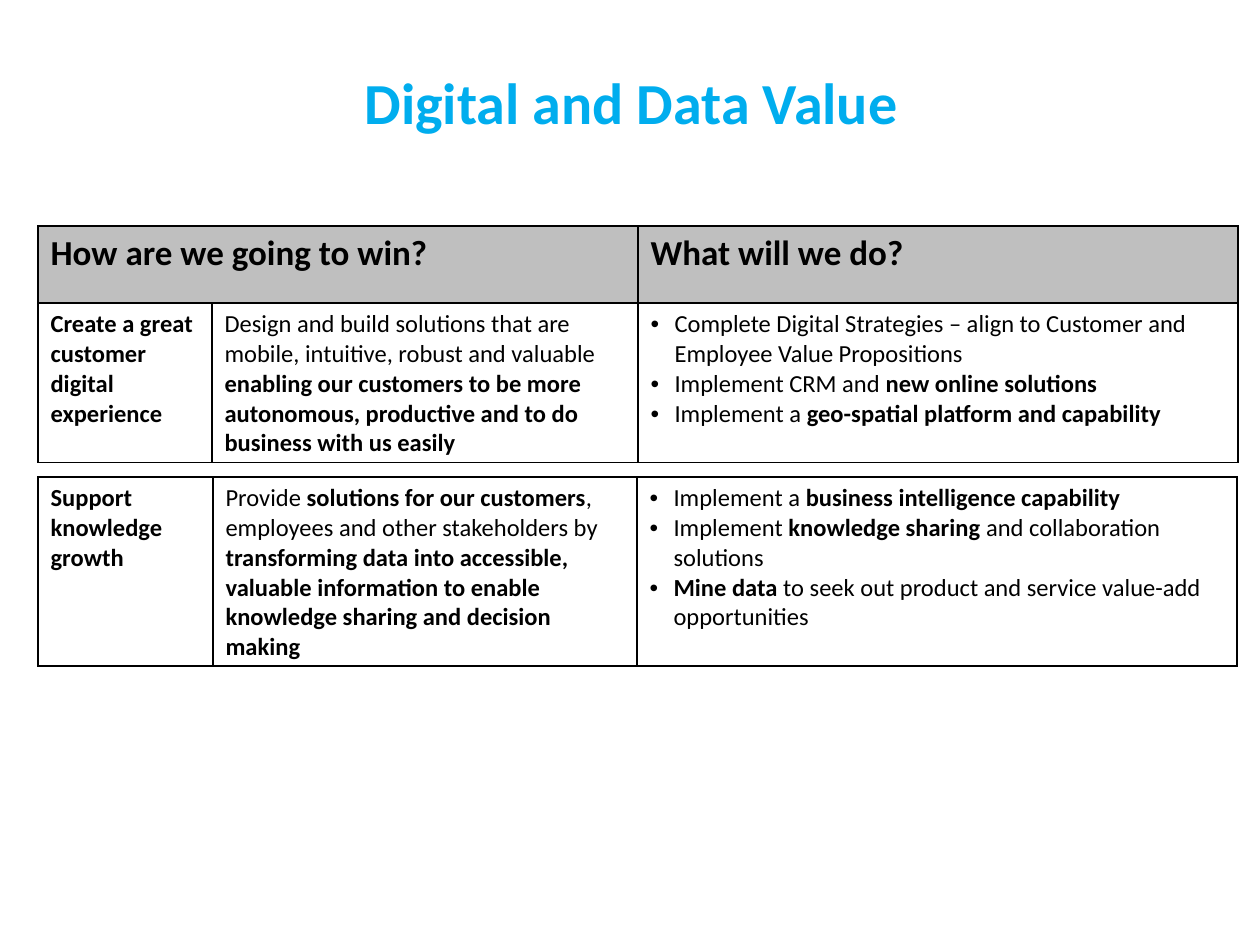
from pptx import Presentation
from pptx import util as u
from pptx.dml.color import RGBColor
from pptx.enum import text
from pptx.oxml.ns import qn
from lxml import etree

PX = 914400 / 126
FONT = "Calibri"
COLORS = {"title": "00ADEE", "ink": "000000", "header": "BFBFBF"}
BULLET_INDENT = 24

HEADER = [["How are we going to win?"], None, ["What will we do?"]]
EXPERIENCE = [
    ["**Create a great customer digital experience**"],
    ["Design and build solutions that are mobile, intuitive, robust and valuable "
     "**enabling our customers to be more autonomous, productive and to do business with us easily**"],
    ["Complete Digital Strategies – align to Customer and Employee Value Propositions",
     "Implement CRM and **new online solutions**",
     "Implement a **geo-spatial platform and capability**"],
]
KNOWLEDGE = [
    ["**Support knowledge growth**"],
    ["Provide **solutions for our customers**, employees and other stakeholders by "
     "**transforming data into accessible, valuable information to enable knowledge sharing "
     "and decision making**"],
    ["Implement a **business intelligence capability**",
     "Implement **knowledge sharing** and collaboration solutions",
     "**Mine data **to seek out product and service value-add opportunities"],
]


def px(length):
    """Turn pixels into EMU."""
    return u.Emu(round(length * PX))


def style_font(font, size, color, bold):
    """Set the face, size, colour and weight of a font."""
    font.name, font.size, font.bold = FONT, u.Pt(size), bold
    font.color.rgb = RGBColor.from_string(COLORS[color])


def add_title(slide, title, left, top, width, height):
    """Add the centred slide title."""
    shape = slide.shapes.add_textbox(px(left), px(top), px(width), px(height))
    frame = shape.text_frame
    frame.word_wrap = True
    frame.margin_left = frame.margin_right = frame.margin_top = frame.margin_bottom = 0
    frame.vertical_anchor = text.MSO_ANCHOR.MIDDLE
    frame.text = title
    paragraph = frame.paragraphs[0]
    paragraph.alignment = text.PP_ALIGN.CENTER
    style_font(paragraph.runs[0].font, 33.2, "title", True)


def add_bullet(paragraph):
    """Give a paragraph a round bullet with a hanging indent."""
    properties = paragraph._p.get_or_add_pPr()
    properties.set("marL", str(px(BULLET_INDENT)))
    properties.set("indent", str(-px(BULLET_INDENT)))
    etree.SubElement(properties, qn("a:buFont")).set("typeface", "Arial")
    etree.SubElement(properties, qn("a:buChar")).set("char", "•")


def add_borders(cell):
    """Draw a thin line on each side of a cell."""
    properties = cell._tc.get_or_add_tcPr()
    for side in ("lnL", "lnR", "lnT", "lnB"):
        line = etree.SubElement(properties, qn(f"a:{side}"), w=str(u.Pt(1)))
        fill = etree.SubElement(line, qn("a:solidFill"))
        etree.SubElement(fill, qn("a:srgbClr")).set("val", COLORS["ink"])


def write_cell(cell, lines, size, bold=False):
    """Write lines into a cell, with ** around bold parts and bullets on lists."""
    for index, line in enumerate(lines):
        frame = cell.text_frame
        paragraph = frame.add_paragraph() if index else frame.paragraphs[0]
        if len(lines) > 1:
            add_bullet(paragraph)
        for part, words in enumerate(line.split("**")):
            if words:
                run = paragraph.add_run()
                run.text = words
                style_font(run.font, size, "ink", bold or part % 2 == 1)


def add_grid(slide, left, top, widths, heights, rows):
    """Add a bordered table, shading the header row and merging its empty cells."""
    table = slide.shapes.add_table(len(rows), len(widths), px(left), px(top),
                                   px(sum(widths)), px(sum(heights))).table
    table.first_row = table.horz_banding = False
    for column, width in zip(table.columns, widths):
        column.width = px(width)
    for r, (row, height) in enumerate(zip(rows, heights)):
        table.rows[r].height = px(height)
        is_header = row is HEADER
        for c, lines in enumerate(row):
            cell = table.cell(r, c)
            add_borders(cell)
            if is_header:
                cell.fill.solid()
                cell.fill.fore_color.rgb = RGBColor.from_string(COLORS["header"])
            else:
                cell.fill.background()
            if lines is None:
                table.cell(r, c - 1).merge(cell)
            else:
                write_cell(cell, lines, 20 if is_header else 14, is_header)


def main():
    """Build the slide and save it."""
    presentation = Presentation()
    presentation.slide_width, presentation.slide_height = px(1260), px(945)
    slide = presentation.slides.add_slide(presentation.slide_layouts[6])
    add_title(slide, "Digital and Data Value", 83, 60, 1097, 83)
    add_grid(slide, 38, 226, [174, 426, 600], [77, 159], [HEADER, EXPERIENCE])
    add_grid(slide, 38, 477, [175, 424, 600], [188], [KNOWLEDGE])
    presentation.save("out.pptx")


if __name__ == "__main__":
    main()
